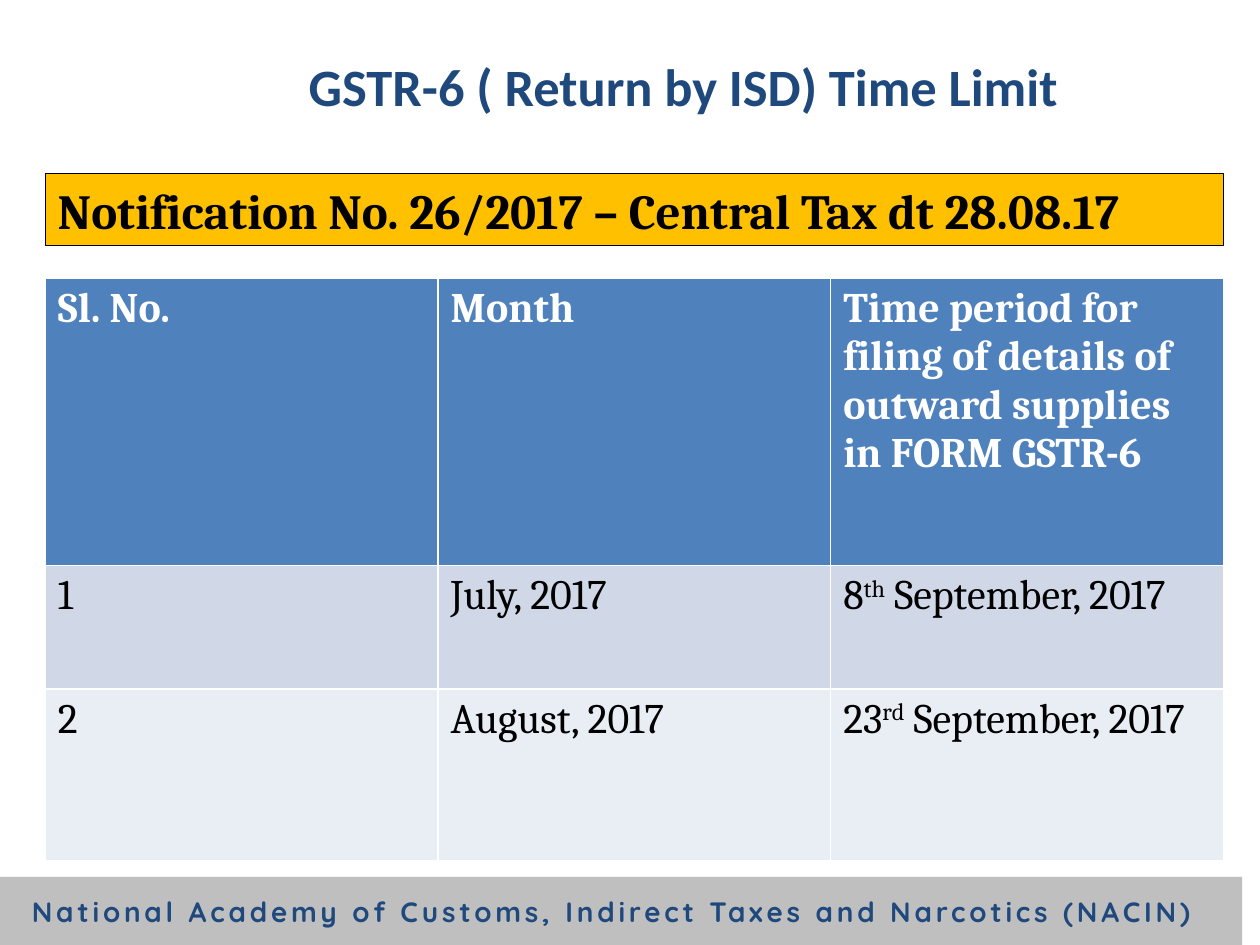
from dataclasses import dataclass

from pptx import Presentation
from pptx.dml.color import RGBColor as Color
from pptx.enum.shapes import MSO_SHAPE as Shape
from pptx.enum.text import MSO_ANCHOR as Anchor, PP_ALIGN as Align
from pptx.util import Inches, Pt


@dataclass(frozen=True)
class Theme:
    navy: str = "1F497D"
    blue: str = "4F81BD"
    gold: str = "FFC000"
    gray: str = "BFBFBF"
    black: str = "000000"
    white: str = "FFFFFF"
    bands: tuple = ("D0D8E8", "E9EDF4")
    sans: str = "Calibri"
    serif: str = "Cambria"
    soft: str = "Quicksand"
    head: int = 30
    note: int = 28
    cell: int = 24
    foot: int = 16


class Deck:
    """Draws styled elements on a slide grid of 100 columns by 75 rows."""

    def __init__(self, theme):
        self.theme = theme
        self.prs = Presentation()
        self.prs.slide_width, self.prs.slide_height = Inches(10), Inches(7.5)
        self.col = self.prs.slide_width / 100
        self.row = self.prs.slide_height / 75
        self.slide = self.prs.slides.add_slide(self.prs.slide_layouts[5])

    def area(self, x, y, w, h):
        return (round(x * self.col), round(y * self.row),
                round(w * self.col), round(h * self.row))

    def paint(self, item, color):
        item.fill.solid()
        item.fill.fore_color.rgb = Color.from_string(color)

    def text(self, frame, runs, face, size, color, bold=True,
             align=Align.LEFT, gap=0):
        para = frame.paragraphs[0]
        para.alignment = align
        for words, lift in runs:
            run = para.add_run()
            run.text = words
            font = run.font
            font.name, font.size, font.bold = face, Pt(size), bold
            font.color.rgb = Color.from_string(color)
            props = run._r.get_or_add_rPr()
            if lift:
                props.set("baseline", str(lift * 1000))
            if gap:
                props.set("spc", str(round(gap * 100)))

    def title(self, words, *area):
        box = self.slide.shapes.title
        box.left, box.top, box.width, box.height = self.area(*area)
        box.text_frame.vertical_anchor = Anchor.MIDDLE
        self.text(box.text_frame, plain(words), self.theme.sans,
                  self.theme.head, self.theme.navy, align=Align.CENTER)

    def bar(self, words, area, fill, face, size, color, line=None,
            anchor=Anchor.MIDDLE, **style):
        box = self.slide.shapes.add_shape(Shape.RECTANGLE, *self.area(*area))
        box.shadow.inherit = False
        self.paint(box, fill)
        if line:
            box.line.color.rgb = Color.from_string(line)
            box.line.width = Pt(0.75)
        else:
            box.line.fill.background()
        frame = box.text_frame
        frame.word_wrap, frame.vertical_anchor = True, anchor
        self.text(frame, plain(words), face, size, color, **style)

    def table(self, data, area, rows):
        look = self.theme
        grid = self.slide.shapes.add_table(
            len(data), len(data[0]), *self.area(*area)).table
        for row, high in zip(grid.rows, rows):
            row.height = round(high * self.row)
        for r, line in enumerate(data):
            top = r == 0
            fill = look.blue if top else look.bands[(r - 1) % 2]
            for c, runs in enumerate(line):
                cell = grid.cell(r, c)
                self.paint(cell, fill)
                self.text(cell.text_frame, runs, look.serif, look.cell,
                          look.white if top else look.black, bold=top)


def plain(words):
    return [(words, 0)]


def date(day, mark, rest):
    return [(day, 0), (mark, 30), (rest, 0)]


def main():
    look = Theme()
    deck = Deck(look)
    left, wide = 3.6, 93.5
    deck.table([
        [plain("Sl. No."), plain("Month"),
         plain("Time period for filing of details of outward supplies "
               "in FORM GSTR-6")],
        [plain("1"), plain("July, 2017"),
         date("8", "th", " September, 2017")],
        [plain("2"), plain("August, 2017"),
         date("23", "rd", " September, 2017")],
    ], (left, 22.1, wide, 46.2), (22.8, 9.8, 13.6))
    deck.title("GSTR-6 ( Return by ISD) Time Limit", 21.1, 1.2, 66.3, 11.2)
    deck.bar("National Academy of Customs, Indirect Taxes and Narcotics (NACIN)",
             (-1.4, 69.6, 100, 5.4), look.gray, look.soft, look.foot,
             look.navy, align=Align.CENTER, gap=2.2)
    deck.bar("Notification No. 26/2017 – Central Tax dt 28.08.17",
             (left, 13.8, wide, 5.7), look.gold, look.serif, look.note,
             look.black, line=look.black, anchor=Anchor.TOP)
    deck.prs.save("out.pptx")


if __name__ == "__main__":
    main()
